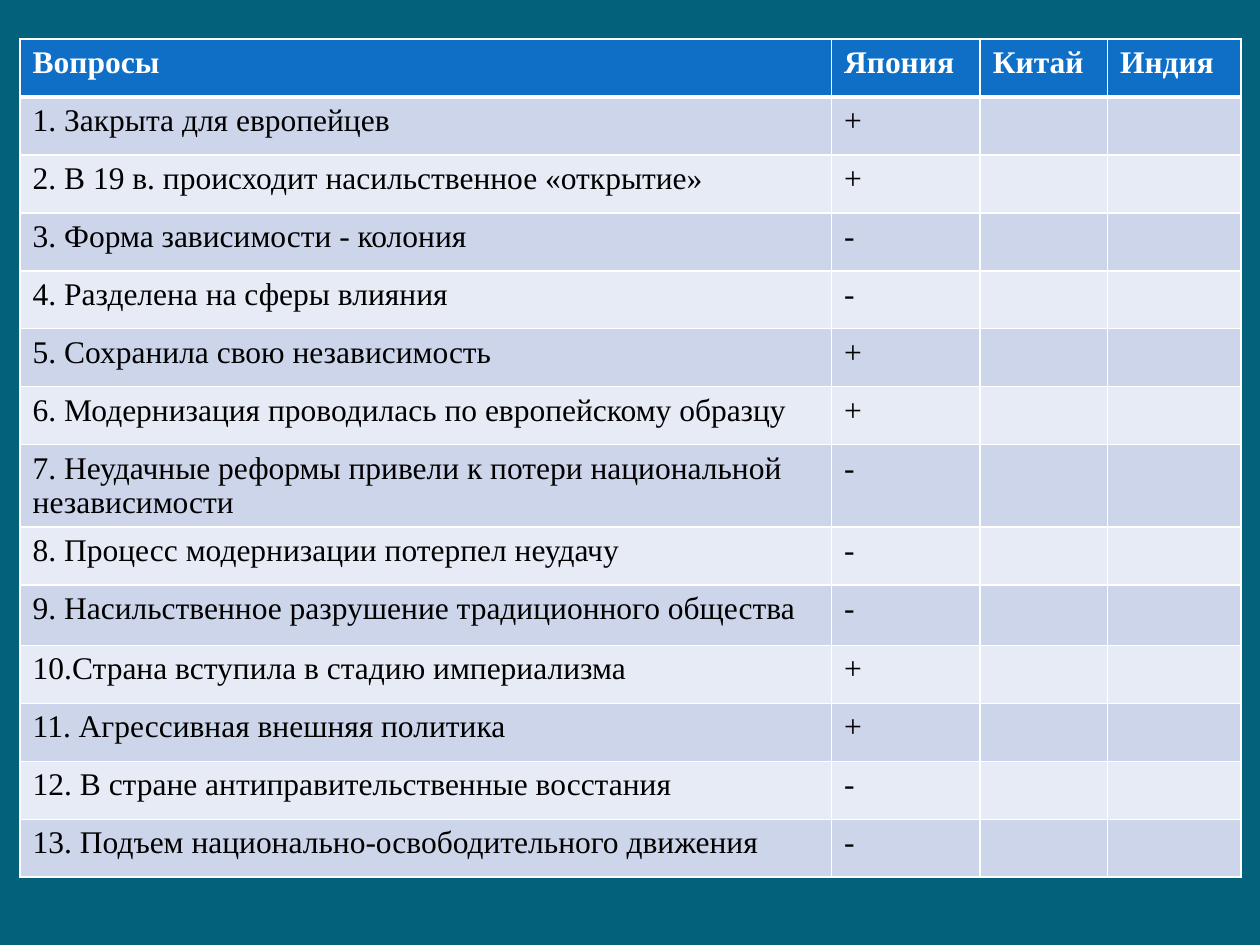
from lxml import etree
from pptx import Presentation
from pptx.dml.color import RGBColor
from pptx.oxml.ns import qn
from pptx.util import Inches, Pt

FONT = "Times New Roman"
COLORS = {
    "background": "04617B",
    "header": "0F6FC6",
    "odd_row": "CCD5EA",
    "even_row": "E7EBF5",
    "border": "FFFFFF",
    "header_text": "FFFFFF",
    "text": "000000",
}
COLUMN_WIDTHS = [6.44, 1.18, 1.01, 1.06]
ROW_HEIGHT = 0.46
SPECIAL_HEIGHTS = {7: 0.65, 9: 0.48}
HEADINGS = ["Вопросы", "Япония", "Китай", "Индия"]
QUESTIONS = [
    ("1. Закрыта для европейцев", "+"),
    ("2. В 19 в. происходит насильственное «открытие»", "+"),
    ("3. Форма зависимости - колония", "-"),
    ("4. Разделена на сферы влияния", "-"),
    ("5. Сохранила свою независимость", "+"),
    ("6. Модернизация проводилась по европейскому образцу", "+"),
    ("7. Неудачные реформы привели к потери национальной независимости", "-"),
    ("8. Процесс модернизации потерпел неудачу", "-"),
    ("9. Насильственное разрушение традиционного общества", "-"),
    ("10.Страна вступила в стадию империализма", "+"),
    ("11. Агрессивная внешняя политика", "+"),
    ("12. В стране антиправительственные восстания", "-"),
    ("13. Подъем национально-освободительного движения", "-"),
]


def color(name):
    return RGBColor.from_string(COLORS[name])


def set_borders(cell, widths):
    """Draw left, right, top and bottom borders, with widths in points."""
    properties = cell._tc.get_or_add_tcPr()
    for position, (side, width) in enumerate(zip("LRTB", widths)):
        line = etree.Element(qn(f"a:ln{side}"), w=str(Pt(width)))
        fill = etree.SubElement(line, qn("a:solidFill"))
        etree.SubElement(fill, qn("a:srgbClr"), val=COLORS["border"])
        properties.insert(position, line)


def fill_cell(cell, text, fill, text_color, bold):
    cell.fill.solid()
    cell.fill.fore_color.rgb = color(fill)
    paragraph = cell.text_frame.paragraphs[0]
    if text:
        paragraph.text = text
    font = paragraph.font
    font.name, font.size, font.bold = FONT, Pt(18), bold
    font.color.rgb = color(text_color)


def add_comparison_table(slide):
    rows = [HEADINGS] + [[question, japan, "", ""] for question, japan in QUESTIONS]
    heights = [SPECIAL_HEIGHTS.get(i, ROW_HEIGHT) for i in range(len(rows))]
    table = slide.shapes.add_table(
        len(rows), len(HEADINGS), Inches(0.16), Inches(0.31),
        Inches(sum(COLUMN_WIDTHS)), Inches(sum(heights))).table
    for column, width in zip(table.columns, COLUMN_WIDTHS):
        column.width = Inches(width)
    for number, (row, height, texts) in enumerate(zip(table.rows, heights, rows)):
        row.height = Inches(height)
        is_header = number == 0
        band = "odd_row" if number % 2 else "even_row"
        for cell, text in zip(row.cells, texts):
            fill_cell(cell, text, "header" if is_header else band,
                      "header_text" if is_header else "text", is_header)
            set_borders(cell, (1, 1, 3 if number == 1 else 1, 3 if is_header else 1))


def main():
    presentation = Presentation()
    presentation.slide_width, presentation.slide_height = Inches(10), Inches(7.5)
    slide = presentation.slides.add_slide(presentation.slide_layouts[6])
    slide.background.fill.solid()
    slide.background.fill.fore_color.rgb = color("background")
    add_comparison_table(slide)
    presentation.save("out.pptx")


if __name__ == "__main__":
    main()
